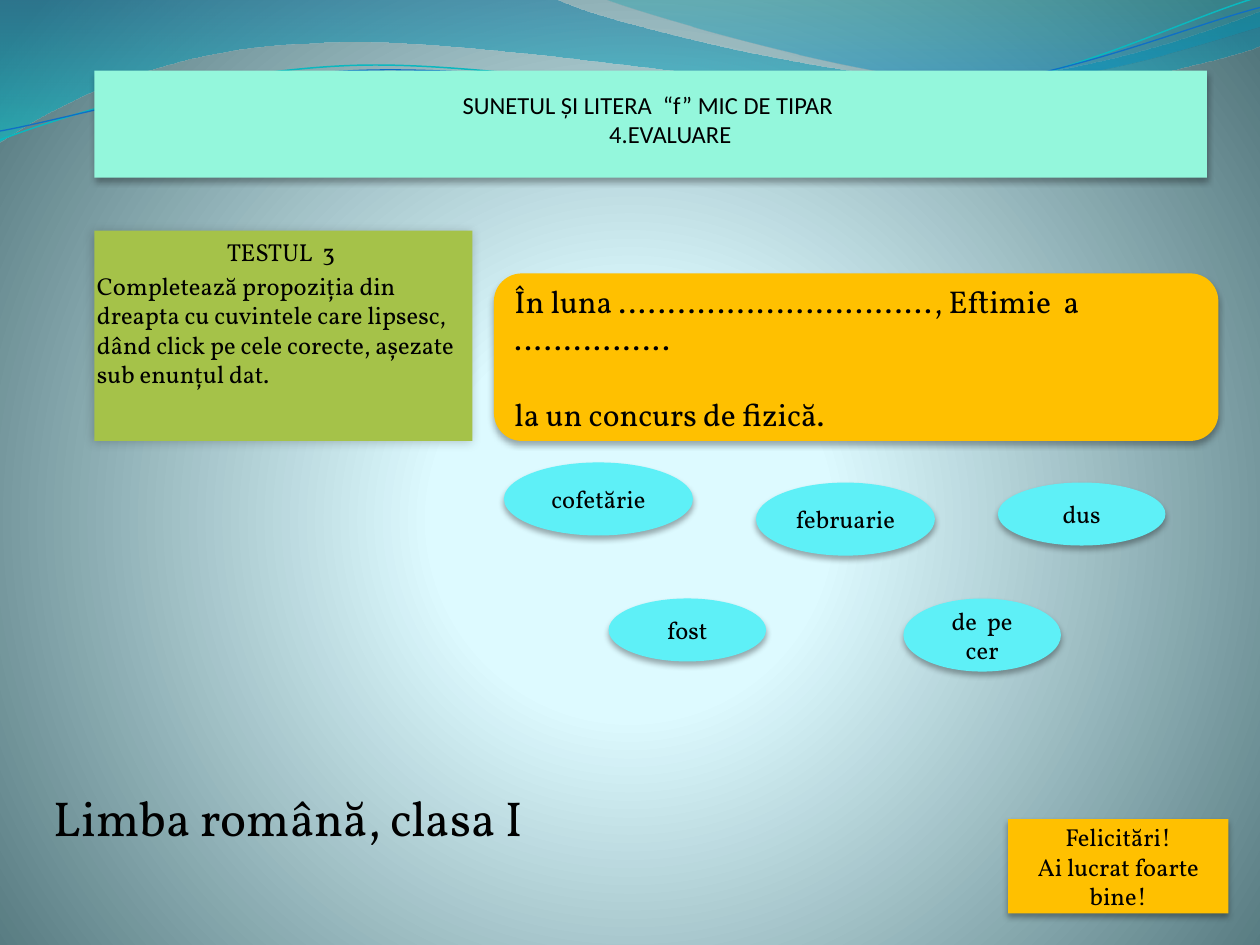
from dataclasses import dataclass
from math import cos, radians, sin

from lxml import etree
from pptx import Presentation
from pptx.dml.color import RGBColor
from pptx.enum.lang import MSO_LANGUAGE_ID
from pptx.enum.shapes import MSO_SHAPE
from pptx.enum.text import MSO_ANCHOR, PP_ALIGN
from pptx.oxml import parse_xml
from pptx.oxml.ns import nsdecls, qn
from pptx.util import Inches, Pt

RECT, ROUNDED, OVAL = MSO_SHAPE.RECTANGLE, MSO_SHAPE.ROUNDED_RECTANGLE, MSO_SHAPE.OVAL
LEFT, CENTER = PP_ALIGN.LEFT, PP_ALIGN.CENTER
TOP, MIDDLE, BOTTOM = MSO_ANCHOR.TOP, MSO_ANCHOR.MIDDLE, MSO_ANCHOR.BOTTOM
ROMANIAN = MSO_LANGUAGE_ID.ROMANIAN
BODY_FONT, TITLE_FONT = "Vollkorn", "Calibri"
BLACK, MINT, GREEN, AMBER, AQUA = "000000", "94F7DC", "A5C249", "FFC000", "5EF0F7"
TILT = -2.7


@dataclass
class Line:
    text: str
    align: PP_ALIGN = CENTER
    before: float = 0
    indent: float = 0


@dataclass
class Shadow:
    opacity: int = 32
    blur: float = 3.5
    distance: float = 2.2
    angle: int = 90


@dataclass
class Panel:
    box: tuple[float, float, float, float]
    lines: list[Line]
    fill: str | None
    preset: MSO_SHAPE = RECT
    size: int = 14
    font: str = BODY_FONT
    anchor: MSO_ANCHOR = MIDDLE
    insets: tuple[float, float, float, float] = (0.1, 0.05, 0.1, 0.05)
    shadow: Shadow | None = None


@dataclass
class Wave:
    start: tuple[float, float]
    segments: list[tuple[float, ...]]
    gradient: list[tuple[int, str, int]] | None = None
    line: str = BLACK
    width: float = 0
    pivot: tuple[float, float] | None = None


def color(value: str) -> RGBColor:
    """Turn a hex string into a colour."""
    return RGBColor.from_string(value)


def gradient_fill(stops: list[tuple[int, str, int]], direction: str) -> etree.ElementBase:
    """Build a gradient from position, colour and opacity stops."""
    stop_xml = "".join(
        f'<a:gs pos="{position * 1000}"><a:srgbClr val="{value}">'
        f'<a:alpha val="{opacity * 1000}"/></a:srgbClr></a:gs>'
        for position, value, opacity in stops
    )
    return parse_xml(
        f'<a:gradFill {nsdecls("a")} rotWithShape="1"><a:gsLst>{stop_xml}</a:gsLst>{direction}</a:gradFill>'
    )


def set_gradient(owner, stops: list[tuple[int, str, int]], direction: str) -> None:
    """Replace the empty fill of a properties element with a gradient."""
    empty = owner.find(qn("a:noFill"))
    owner.replace(empty, gradient_fill(stops, direction))


def paint_background(slide) -> None:
    """Paint the radial glow behind the slide."""
    slide.background.fill.background()
    properties = slide.element.find(f'.//{qn("p:bgPr")}')
    glow = '<a:path path="circle"><a:fillToRect l="10000" t="110000" r="10000" b="100000"/></a:path>'
    set_gradient(properties, [(0, "DEFBFF", 100), (25, "DDFAFF", 100), (100, "52767C", 100)], glow)


def level(point: tuple[float, float], pivot: tuple[float, float] | None) -> tuple[int, int]:
    """Undo the tilt of a point around its pivot and convert it to lengths."""
    x, y = point
    if pivot:
        dx, dy, angle = x - pivot[0], y - pivot[1], radians(-TILT)
        x = pivot[0] + dx * cos(angle) - dy * sin(angle)
        y = pivot[1] + dx * sin(angle) + dy * cos(angle)
    return Inches(x), Inches(y)


def bend(shape, segments: list[tuple[float, ...]]) -> None:
    """Join each three straight steps of a cubic segment into one curve."""
    steps = iter(list(shape.element.spPr.iter(qn("a:lnTo"))))
    for segment in segments:
        first = next(steps)
        if len(segment) == 2:
            continue
        curve = etree.Element(qn("a:cubicBezTo"))
        first.addprevious(curve)
        for step in (first, next(steps), next(steps)):
            curve.append(step[0])
            step.getparent().remove(step)


def draw_wave(slide, wave: Wave) -> None:
    """Draw a filled wave or a thin wave line."""
    points = [pair for segment in wave.segments for pair in zip(segment[::2], segment[1::2])]
    builder = slide.shapes.build_freeform(*level(wave.start, wave.pivot))
    builder.add_line_segments([level(point, wave.pivot) for point in points], close=bool(wave.gradient))
    shape = builder.convert_to_shape()
    bend(shape, wave.segments)
    shape.shadow.inherit = False
    shape.fill.background()
    if wave.pivot:
        shape.rotation = TILT
    if wave.gradient:
        shape.line.fill.background()
        set_gradient(shape.element.spPr, wave.gradient, '<a:lin ang="5400000" scaled="1"/>')
    else:
        shape.line.color.rgb = color(wave.line)
        shape.line.width = Pt(wave.width)


def cast_shadow(shape, shadow: Shadow) -> None:
    """Give a shape a soft black outer shadow."""
    effects = shape.element.spPr.find(qn("a:effectLst"))
    effects.append(parse_xml(
        f'<a:outerShdw {nsdecls("a")} blurRad="{Pt(shadow.blur)}" dist="{Pt(shadow.distance)}" '
        f'dir="{shadow.angle * 60000}" rotWithShape="0"><a:srgbClr val="{BLACK}">'
        f'<a:alpha val="{shadow.opacity * 1000}"/></a:srgbClr></a:outerShdw>'
    ))


def draw_panel(slide, panel: Panel) -> None:
    """Draw a panel with its text."""
    box = [Inches(length) for length in panel.box]
    if panel.fill:
        shape = slide.shapes.add_shape(panel.preset, *box)
        shape.shadow.inherit = False
        shape.fill.solid()
        shape.fill.fore_color.rgb = color(panel.fill)
        shape.line.fill.background()
    else:
        shape = slide.shapes.add_textbox(*box)
    if panel.shadow:
        cast_shadow(shape, panel.shadow)
    frame = shape.text_frame
    frame.word_wrap = True
    frame.vertical_anchor = panel.anchor
    frame.margin_left, frame.margin_top, frame.margin_right, frame.margin_bottom = map(Inches, panel.insets)
    for index, line in enumerate(panel.lines):
        paragraph = frame.add_paragraph() if index else frame.paragraphs[0]
        paragraph.alignment = line.align
        paragraph.space_before = Pt(line.before)
        if line.indent:
            paragraph._p.get_or_add_pPr().set("marL", str(Inches(line.indent)))
        run = paragraph.add_run()
        run.text = line.text
        run.font.name, run.font.size = panel.font, Pt(panel.size)
        run.font.language_id = ROMANIAN
        run.font.color.rgb = color(BLACK)


WAVES = [
    Wave((0, 0), [(4.4, -0.01), (4.76, 0.17, 6.64, 0.63, 7.58, 0.63), (8.53, 0.63, 9.58, 0.26, 10, 0.09),
                  (10.01, 0.36), (9.83, 0.44, 8.7, 0.76, 7.46, 0.75), (6.22, 0.75, 3.82, 0.28, 2.57, 0.34),
                  (1.29, 0.36, 0.46, 0.83, -0.01, 1.13), (0, 0)], [(0, "0074A1", 45), (100, "00C6CF", 55)]),
    Wave((4.79, -0.01), [(5.09, 0.11, 6.82, 0.62, 7.69, 0.65), (8.56, 0.69, 9.61, 0.32, 10, 0.21), (10, 0),
                         (4.79, -0.01)], [(0, "00A1A9", 30), (80, "008BBF", 45)]),
    Wave((0, 1.11), [(0.48, 0.93, 1.58, 0.57, 2.77, 0.52), (3.95, 0.47, 5.93, 0.89, 7.13, 0.8),
                     (8.33, 0.71, 9.38, 0.15, 9.98, -0.02)], line="0AB8BF", width=0.85, pivot=(4.99, 0.58)),
    Wave((0, 1.04), [(0.47, 0.96, 1.64, 0.61, 2.83, 0.56), (4.03, 0.51, 5.97, 0.84, 7.17, 0.75),
                     (8.36, 0.67, 9.41, 0.21, 10, 0.06)], line="0F6FC6", width=0.75, pivot=(5, 0.59)),
]
ANSWERS = {
    "cofetărie": (4, 3.67, 1.5, 0.58),
    "februarie": (6, 3.83, 1.42, 0.58),
    "fost": (4.83, 4.75, 1.25, 0.5),
    "dus": (7.92, 3.83, 1.33, 0.5),
    "de  pe cer": (7.17, 4.75, 1.25, 0.58),
}
PANELS = [
    Panel((0.75, 0.56, 8.83, 0.85), [Line("SUNETUL ŞI LITERA  “f” MIC DE TIPAR "), Line("4.EVALUARE", indent=0.31)],
          MINT, font=TITLE_FONT, anchor=BOTTOM, insets=(0, 0.05, 0, 0.23), shadow=Shadow()),
    Panel((0.75, 1.83, 3, 1.67),
          [Line("TESTUL  3 ", before=2.8),
           Line("Completează propoziţia din dreapta cu cuvintele care lipsesc, dând click pe cele corecte, "
                "aşezate sub enunţul dat.", LEFT, before=2.8)],
          GREEN, anchor=TOP, insets=(0.02, 0.05, 0.02, 0.05), shadow=Shadow(20, 6, 1, 135)),
    Panel((0.33, 6.25, 5.59, 0.83), [Line("Limba română, clasa I", LEFT, before=5.6)],
          None, size=28, anchor=TOP, insets=(0.1, 0, 0.1, 0.05)),
    Panel((3.92, 2.17, 5.75, 1.33),
          [Line("În luna ………………………….., Eftimie  a …………….", LEFT),
           Line("la un concurs de fizică.", LEFT, before=21.6)],
          AMBER, ROUNDED, size=18, shadow=Shadow()),
    *[Panel(box, [Line(word)], AQUA, OVAL, shadow=Shadow()) for word, box in ANSWERS.items()],
    Panel((8, 6.5, 1.75, 0.75), [Line("Felicitări!"), Line("Ai lucrat foarte bine!")], AMBER, shadow=Shadow()),
]


def main() -> None:
    """Build the quiz slide and save it."""
    deck = Presentation()
    deck.slide_width, deck.slide_height = Inches(10), Inches(7.5)
    slide = deck.slides.add_slide(deck.slide_layouts[6])
    paint_background(slide)
    for wave in WAVES:
        draw_wave(slide, wave)
    for panel in PANELS:
        draw_panel(slide, panel)
    deck.save("out.pptx")


if __name__ == "__main__":
    main()
